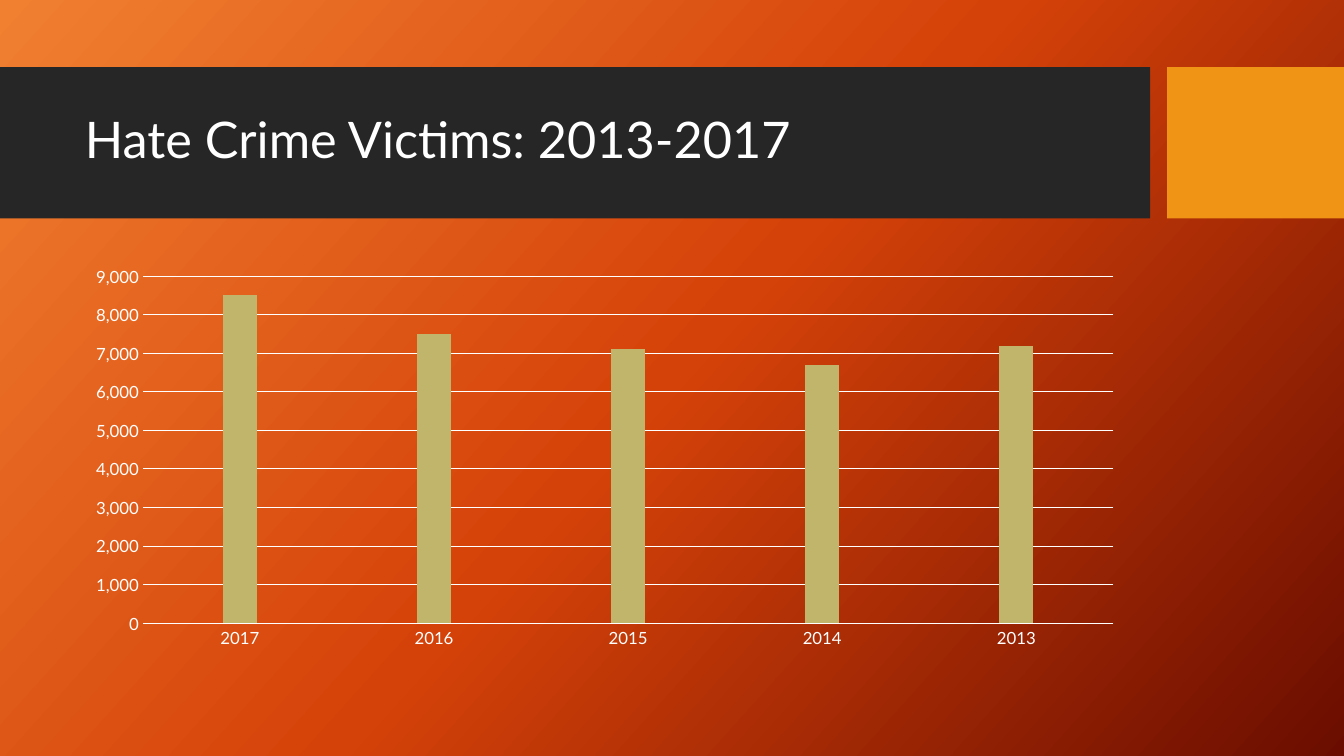
from copy import deepcopy

from lxml.etree import SubElement
from pptx import Presentation
from pptx.chart.data import CategoryChartData
from pptx.dml.color import RGBColor
from pptx.enum.chart import XL_CHART_TYPE, XL_TICK_MARK
from pptx.enum.shapes import MSO_SHAPE
from pptx.enum.text import MSO_ANCHOR, MSO_AUTO_SIZE, PP_ALIGN
from pptx.oxml.ns import qn
from pptx.util import Pt

# Content
TITLE = "Hate Crime Victims: 2013-2017"
YEARS = ["2017", "2016", "2015", "2014", "2013"]
VICTIMS = [8500, 7500, 7100, 6700, 7200]
NO_VALUES = [None] * len(YEARS)

FONT = "Lato"
WHITE = RGBColor(0xFF, 0xFF, 0xFF)
CHARCOAL = RGBColor(0x26, 0x26, 0x26)
AMBER = RGBColor(0xF0, 0x94, 0x15)
KHAKI = RGBColor(0xC1, 0xB5, 0x6B)
GREEN = RGBColor(0x4B, 0xAF, 0x73)
BACKGROUND_STOPS = [
    (0, RGBColor(0xF1, 0x80, 0x31)),
    (0.5, RGBColor(0xD5, 0x42, 0x09)),
    (1, RGBColor(0x6A, 0x0D, 0x00)),
]
SERIES = [
    ("Series 1", NO_VALUES, AMBER),
    ("Series 2", VICTIMS, KHAKI),
    ("Series 3", NO_VALUES, GREEN),
]

# Layout in points
WIDTH, HEIGHT = 960, 540
BAND_TOP, BAND_HEIGHT = 48, 108
BAND_WIDTH, ACCENT_WIDTH = 821.5, 126.3
CONTENT_LEFT, CONTENT_WIDTH = 53.5, 757


def style_font(font, size):
    font.name, font.size = FONT, Pt(size)
    font.color.rgb = WHITE


def style_line(line):
    line.color.rgb = WHITE
    line.width = Pt(0.75)


def add_block(slide, left, width, color):
    block = slide.shapes.add_shape(
        MSO_SHAPE.RECTANGLE, Pt(left), Pt(BAND_TOP), Pt(width), Pt(BAND_HEIGHT))
    block.shadow.inherit = False
    block.fill.solid()
    block.fill.fore_color.rgb = color
    block.line.fill.background()


def paint_background(slide):
    fill = slide.background.fill
    fill.gradient()
    fill.gradient_angle = 360 - 42  # counter-clockwise
    stop_list = slide.element.find(".//" + qn("a:gsLst"))
    stop_list.append(deepcopy(stop_list[-1]))
    for stop, (position, color) in zip(fill.gradient_stops, BACKGROUND_STOPS):
        stop.position = position
        stop.color.rgb = color


def add_title(slide):
    title = slide.shapes.title
    slide.shapes.element.append(title.element)  # in front of the band
    title.left, title.top = Pt(CONTENT_LEFT), Pt(59)
    title.width, title.height = Pt(CONTENT_WIDTH), Pt(85)
    frame = title.text_frame
    frame.word_wrap = True
    frame.auto_size = MSO_AUTO_SIZE.NONE
    frame.vertical_anchor = MSO_ANCHOR.MIDDLE
    paragraph = frame.paragraphs[0]
    paragraph.alignment = PP_ALIGN.LEFT
    paragraph.line_spacing = 0.9
    run = paragraph.add_run()
    run.text = TITLE
    style_font(run.font, 36)


def add_victims_chart(slide):
    data = CategoryChartData(number_format="#,##0")
    data.categories = YEARS
    for name, values, _ in SERIES:
        data.add_series(name, values)
    chart = slide.shapes.add_chart(
        XL_CHART_TYPE.COLUMN_CLUSTERED, Pt(CONTENT_LEFT), Pt(184.5),
        Pt(CONTENT_WIDTH), Pt(283.5), data).chart
    chart.has_legend = chart.has_title = False
    style_font(chart.font, 10)

    # Columns
    plot = chart.plots[0]
    plot.vary_by_categories = False
    plot.gap_width, plot.overlap = 219, -27
    for series, (_, _, color) in zip(plot.series, SERIES):
        series.format.fill.solid()
        series.format.fill.fore_color.rgb = color

    # Axes
    years, counts = chart.category_axis, chart.value_axis
    for axis in (years, counts):
        axis.major_tick_mark = axis.minor_tick_mark = XL_TICK_MARK.NONE
        style_font(axis.tick_labels.font, 12)
    style_line(years.format.line)
    counts.minimum_scale, counts.maximum_scale, counts.major_unit = 0, 9000, 1000
    counts.tick_labels.number_format = "#,##0"
    counts.tick_labels.number_format_is_linked = False
    counts.format.line.fill.background()
    counts.has_major_gridlines = True
    style_line(counts.major_gridlines.format.line)


def main():
    deck = Presentation()
    deck.slide_width, deck.slide_height = Pt(WIDTH), Pt(HEIGHT)
    slide = deck.slides.add_slide(deck.slide_layouts[5])
    paint_background(slide)
    add_block(slide, 0, BAND_WIDTH, CHARCOAL)
    add_block(slide, WIDTH - ACCENT_WIDTH, ACCENT_WIDTH, AMBER)
    add_title(slide)
    add_victims_chart(slide)
    deck.save("out.pptx")


if __name__ == "__main__":
    main()
